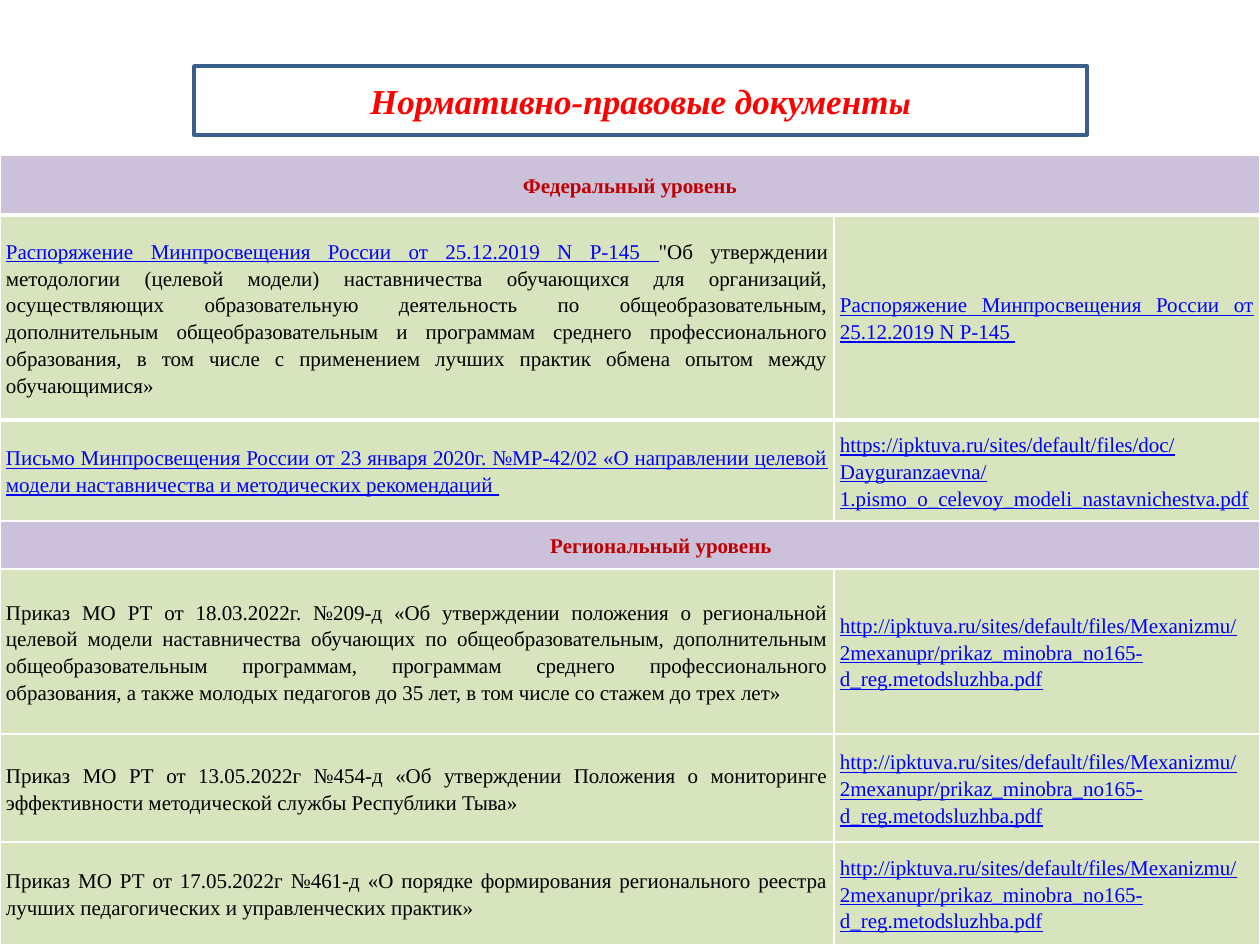
from lxml.etree import SubElement
from pptx import Presentation
from pptx.dml.color import RGBColor
from pptx.enum.shapes import MSO_SHAPE
from pptx.enum.text import MSO_ANCHOR, PP_ALIGN
from pptx.oxml.ns import qn
from pptx.util import Emu, Pt

WHITE = RGBColor(0xFF, 0xFF, 0xFF)
BLACK = RGBColor(0x00, 0x00, 0x00)
RED = RGBColor(0xFF, 0x00, 0x00)
DARK_RED = RGBColor(0xC0, 0x00, 0x00)
LINK_BLUE = RGBColor(0x00, 0x00, 0xFF)
FRAME_BLUE = RGBColor(0x3A, 0x5F, 0x8C)
LILAC = RGBColor(0xCC, 0xC1, 0xDA)
GREEN = RGBColor(0xD7, 0xE4, 0xBD)

COL_WIDTHS = [834, 426]
ROW_HEIGHTS = [60, 205, 101, 48, 165, 108, 103]
THICK_EDGES = {1, 2}

ORDER = "Распоряжение Минпросвещения России от 25.12.2019 N Р-145 "
ORDER_TOPIC = (
    '"Об утверждении методологии (целевой модели) наставничества обучающихся '
    "для организаций, осуществляющих образовательную деятельность по "
    "общеобразовательным, дополнительным общеобразовательным и программам "
    "среднего профессионального образования, в том числе с применением лучших "
    "практик обмена опытом между обучающимися»"
)
LETTER = (
    "Письмо Минпросвещения России от 23 января 2020г. №МР-42/02 «О направлении "
    "целевой модели наставничества и методических рекомендаций "
)
LETTER_URL = (
    "https://ipktuva.ru/sites/default/files/doc/Dayguranzaevna/"
    "1.pismo_o_celevoy_modeli_nastavnichestva.pdf"
)
REGIONAL_URL = (
    "http://ipktuva.ru/sites/default/files/Mexanizmu/2mexanupr/"
    "prikaz_minobra_no165-d_reg.metodsluzhba.pdf"
)
REGIONAL_ORDERS = [
    "Приказ МО РТ от 18.03.2022г. №209-д «Об утверждении положения о "
    "региональной целевой модели наставничества обучающих по "
    "общеобразовательным, дополнительным общеобразовательным программам, "
    "программам среднего профессионального образования, а также молодых "
    "педагогов до 35 лет, в том числе со стажем до трех лет»",
    "Приказ МО РТ от 13.05.2022г №454-д «Об утверждении Положения о "
    "мониторинге эффективности методической службы Республики Тыва»",
    "Приказ МО РТ от 17.05.2022г №461-д «О порядке формирования регионального "
    "реестра лучших педагогических и управленческих практик»",
]


def px(n):
    return Emu(round(n * 914400 / 126))


class SlideBuilder:
    font = "Times New Roman"
    cell_size = 12
    cell_margin = 6

    def __init__(self, prs):
        self.slide = prs.slides.add_slide(prs.slide_layouts[6])

    def run(self, p, text, size, color, bold=False, italic=False, underline=False):
        r = p.add_run()
        r.text = text
        r.font.name = self.font
        r.font.size = Pt(size)
        r.font.color.rgb = color
        r.font.bold = bold
        r.font.italic = italic
        r.font.underline = underline

    def title(self, x, y, w, h, runs):
        sp = self.slide.shapes.add_shape(MSO_SHAPE.RECTANGLE, px(x), px(y), px(w), px(h))
        sp.shadow.inherit = False
        sp.fill.solid()
        sp.fill.fore_color.rgb = WHITE
        sp.line.color.rgb = FRAME_BLUE
        sp.line.width = Pt(2)
        tf = sp.text_frame
        tf.word_wrap = True
        tf.vertical_anchor = MSO_ANCHOR.MIDDLE
        p = tf.paragraphs[0]
        p.alignment = PP_ALIGN.CENTER
        for text, size in runs:
            self.run(p, text, size, RED, bold=True, italic=True)

    def table(self, x, y, widths, heights):
        frame = self.slide.shapes.add_table(
            len(heights), len(widths), px(x), px(y), px(sum(widths)), px(sum(heights))
        )
        table = frame.table
        table.first_row = False
        table.horz_banding = False
        for col, w in zip(table.columns, widths):
            col.width = px(w)
        for row, h in zip(table.rows, heights):
            row.height = px(h)
        return table

    def borders(self, cell, row):
        tcPr = cell._tc.get_or_add_tcPr()
        edges = {"a:lnL": None, "a:lnR": None, "a:lnT": row, "a:lnB": row + 1}
        for tag, edge in edges.items():
            width = Pt(3 if edge in THICK_EDGES else 1)
            ln = SubElement(tcPr, qn(tag), w=str(int(width)))
            fill = SubElement(ln, qn("a:solidFill"))
            SubElement(fill, qn("a:srgbClr"), val=str(WHITE))

    def cell(self, table, row, col, fill, align):
        cell = table.cell(row, col)
        self.borders(cell, row)
        cell.fill.solid()
        cell.fill.fore_color.rgb = fill
        cell.vertical_anchor = MSO_ANCHOR.MIDDLE
        cell.margin_left = cell.margin_right = px(self.cell_margin)
        cell.margin_top = cell.margin_bottom = 0
        p = cell.text_frame.paragraphs[0]
        p.alignment = align
        p.line_spacing = 1.15
        p.space_after = Pt(10)
        return cell, p

    def heading(self, table, row, text, shift=0):
        cell, p = self.cell(table, row, 0, LILAC, PP_ALIGN.CENTER)
        self.cell(table, row, 1, LILAC, PP_ALIGN.CENTER)
        cell.merge(table.cell(row, 1))
        cell.margin_left = px(self.cell_margin + 2 * shift)
        self.run(p, text, self.cell_size, DARK_RED, bold=True)

    def entry(self, table, row, col, link="", text=""):
        _, p = self.cell(table, row, col, GREEN, PP_ALIGN.JUSTIFY)
        if link:
            self.run(p, link, self.cell_size, LINK_BLUE, underline=True)
        if text:
            self.run(p, text, self.cell_size, BLACK)


def main():
    prs = Presentation()
    prs.slide_width, prs.slide_height = px(1260), px(945)
    s = SlideBuilder(prs)

    table = s.table(0, 155, COL_WIDTHS, ROW_HEIGHTS)
    s.heading(table, 0, "Федеральный уровень")
    s.entry(table, 1, 0, link=ORDER, text=ORDER_TOPIC)
    s.entry(table, 1, 1, link=ORDER)
    s.entry(table, 2, 0, link=LETTER)
    s.entry(table, 2, 1, link=LETTER_URL)
    s.heading(table, 3, "Региональный уровень", shift=31)
    for row, order in enumerate(REGIONAL_ORDERS, start=4):
        s.entry(table, row, 0, text=order)
        s.entry(table, row, 1, link=REGIONAL_URL)

    s.title(194, 66, 893, 69, [("Нормативно-правовые документ", 20), ("ы", 18)])
    prs.save("out.pptx")


if __name__ == "__main__":
    main()
